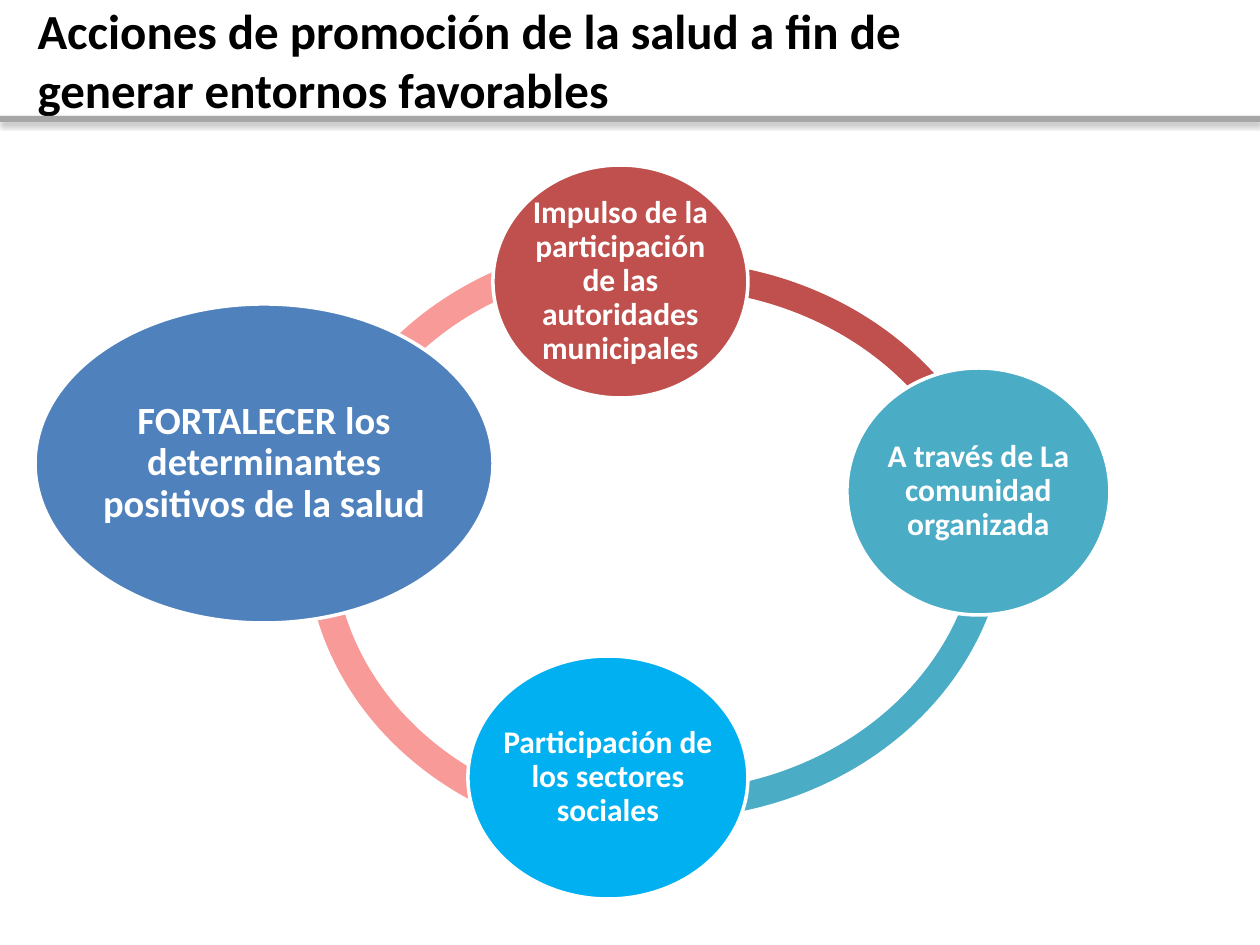
from lxml import etree
from pptx import Presentation
from pptx import util as u
from pptx.dml.color import RGBColor
from pptx.enum import shapes, text
from pptx.oxml import ns

PX = 914400 / 126
FONT = "Calibri"
WHITE = "FFFFFF"
RING_SIZE = (684, 605)
RING_THICKNESS = 0.046
ARCS = [
    ((306, 239), 90, 250, "F79A98"),
    ((323, 214), 5, 85, "4BACC6"),
    ((326, 261), 275, 335, "C0504D"),
]
NODES = [
    ((35, 304, 458, 319), "4F81BD", 22, "FORTALECER los determinantes positivos de la salud"),
    ((493, 165, 255, 233), "C0504D", 18,
     "Impulso de la participación de las autoridades municipales"),
    ((847, 368, 263, 247), "4BACC6", 18, "A través de La comunidad organizada"),
    ((468, 656, 280, 243), "00B0F0", 18, "Participación de los sectores sociales"),
]


def px(length):
    return round(length * PX)


def color(hex_string):
    return RGBColor.from_string(hex_string)


def add_solid(slide, kind, box, fill):
    solid = slide.shapes.add_shape(kind, *map(px, box))
    solid.shadow.inherit = False
    solid.fill.solid()
    solid.fill.fore_color.rgb = color(fill)
    solid.line.fill.background()
    return solid


def style_text(paragraph, size, hex_string):
    for run in paragraph.runs:
        run.font.name = FONT
        run.font.size = u.Pt(size)
        run.font.bold = True
        run.font.color.rgb = color(hex_string)


def add_shadow(shape):
    effects = shape._element.spPr.find(ns.qn("a:effectLst"))
    shadow = etree.SubElement(
        effects, ns.qn("a:outerShdw"), blurRad=str(u.Pt(3.1)), dist=str(u.Pt(1.8)),
        dir="5400000", rotWithShape="0")
    black = etree.SubElement(shadow, ns.qn("a:srgbClr"), val="000000")
    etree.SubElement(black, ns.qn("a:alpha"), val="35000")


def add_header(slide, box):
    left, top, width, height = box
    rule = add_solid(slide, shapes.MSO_SHAPE.RECTANGLE,
                     (left, top + 116, width, 6), "A6A6A6")
    add_shadow(rule)
    title = slide.shapes.title
    title.left, title.top = px(left + 25), px(top - 6)
    title.width, title.height = px(932), px(height)
    frame = title.text_frame
    frame.text = "Acciones de promoción de la salud a fin de generar entornos favorables"
    frame.word_wrap = True
    frame.auto_size = text.MSO_AUTO_SIZE.NONE
    frame.vertical_anchor = text.MSO_ANCHOR.TOP
    frame.paragraphs[0].alignment = text.PP_ALIGN.LEFT
    style_text(frame.paragraphs[0], 28, "000000")


def add_arc(slide, corner, start, end, fill):
    arc = add_solid(slide, shapes.MSO_SHAPE.BLOCK_ARC, corner + RING_SIZE, fill)
    arc.adjustments[0] = start * 0.6
    arc.adjustments[1] = end * 0.6
    arc.adjustments[2] = RING_THICKNESS


def add_node(slide, box, fill, size, label):
    node = add_solid(slide, shapes.MSO_SHAPE.OVAL, box, fill)
    node.line.color.rgb = color(WHITE)
    node.line.width = u.Pt(2)
    frame = node.text_frame
    frame.text = label
    frame.word_wrap = True
    frame.vertical_anchor = text.MSO_ANCHOR.MIDDLE
    frame.margin_left = frame.margin_right = px(-8)
    frame.margin_top = frame.margin_bottom = px(-8)
    paragraph = frame.paragraphs[0]
    paragraph.alignment = text.PP_ALIGN.CENTER
    paragraph.line_spacing = 0.9
    style_text(paragraph, size, WHITE)


def add_cycle(slide, left, top):
    for (x, y), start, end, fill in ARCS:
        add_arc(slide, (left + x, top + y), start, end, fill)
    for (x, y, width, height), fill, size, label in NODES:
        add_node(slide, (left + x, top + y, width, height), fill, size, label)


def main():
    deck = Presentation()
    deck.slide_width, deck.slide_height = px(1260), px(945)
    slide = deck.slides.add_slide(deck.slide_layouts[5])
    add_header(slide, (0, 0, 1260, 131))
    add_cycle(slide, 0, 0)
    deck.save("out.pptx")


if __name__ == "__main__":
    main()
